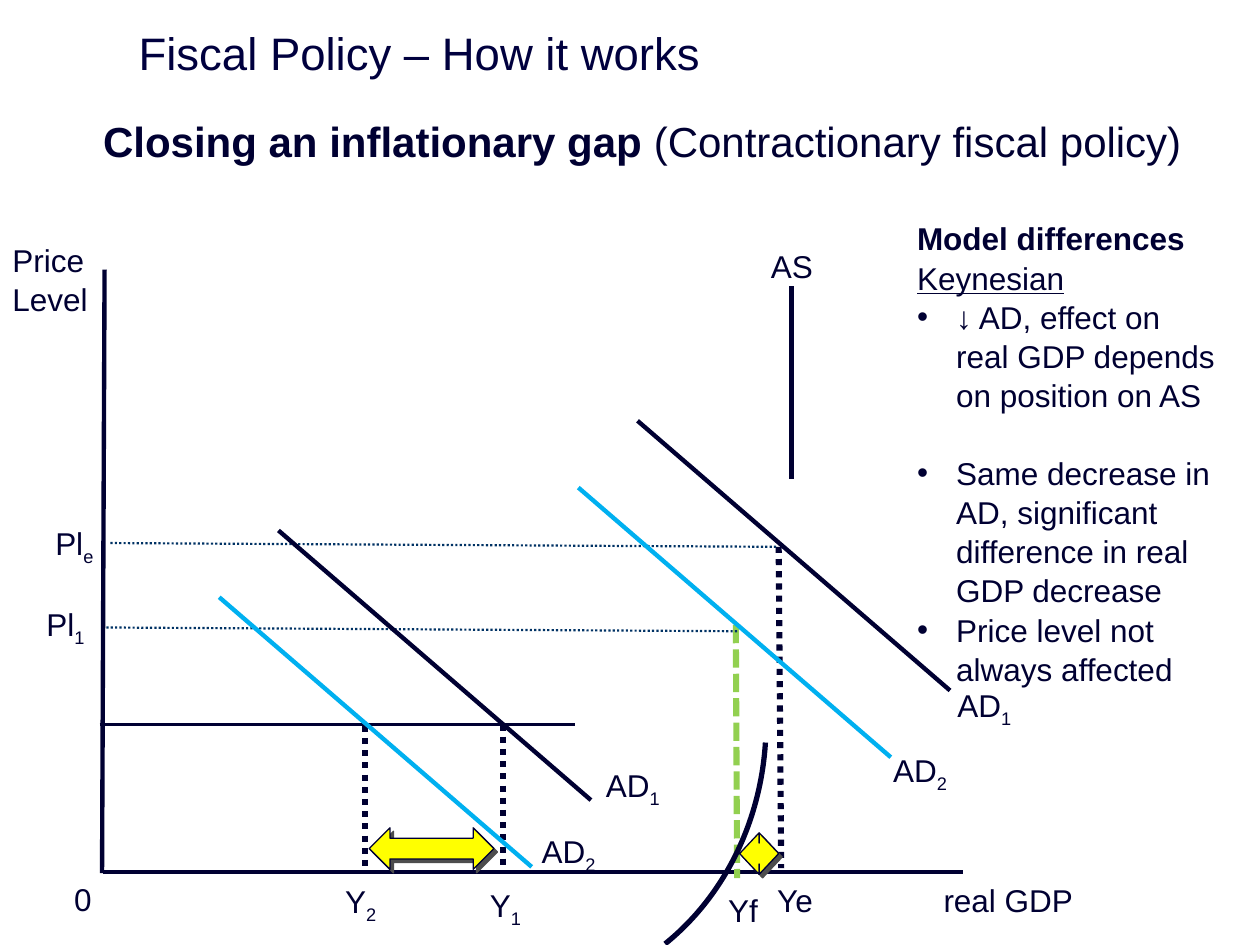
from lxml import etree
from pptx import Presentation
from pptx import oxml
from pptx import util as u
from pptx.dml.color import RGBColor
from pptx.enum import dml, shapes, text
from pptx.oxml.ns import qn

NAVY, BLUE, CYAN = "000032", "003264", "00B0F0"
GREEN, YELLOW, GREY = "92D050", "FFFF00", "4D4D4D"
DOT, DASH = dml.MSO_LINE.ROUND_DOT, dml.MSO_LINE.SQUARE_DOT

TITLE = "Fiscal Policy – How it works"
HEAD = [("Closing an inflationary gap ", True),
        ("(Contractionary fiscal policy)", False)]

# Start, end, colour, width, dash
LINES = [
    ((0.83, 2.14), (0.81, 6.93), NAVY, 2.5, None),
    ((7.64, 6.92), (0.82, 6.92), NAVY, 2.5, None),
    ((0.79, 5.75), (4.56, 5.75), NAVY, 2, None),
    ((6.28, 3.8), (6.28, 2.27), NAVY, 3, None),
    ((6.18, 4.34), (6.2, 6.89), NAVY, 3.5, DOT),
    ((5.84, 4.96), (5.85, 6.97), GREEN, 3.5, DASH),
    ((5.85, 5.01), (0.83, 4.98), BLUE, 1.25, DOT),
    ((6.16, 4.34), (0.86, 4.31), BLUE, 1.25, DOT),
    ((3.99, 5.75), (3.99, 6.93), NAVY, 3.5, DOT),
    ((2.9, 5.76), (2.9, 6.94), NAVY, 3.5, DOT),
]

# Every demand curve has the same run and fall
FALL = (2.48, 2.14)
DEMAND = [((4.59, 3.87), CYAN), ((5.06, 3.34), NAVY),
          ((1.74, 4.74), CYAN), ((2.21, 4.21), NAVY)]

GAPS = [(2.93, 6.57, 0.99, 0.33), (5.87, 6.61, 0.31, 0.33)]

# Text, subscript, left, top, width
LABELS = [
    ("real GDP", "", 7.39, 6.93, 1.24), ("0", "", 0.49, 6.92, 0.64),
    ("Yf", "", 5.68, 7.01, 1.24), ("Ye", "", 6.07, 6.93, 0.54),
    ("AS", "", 6.02, 1.9, 0.97),
    ("AD", "2", 6.99, 5.9, 0.65), ("AD", "1", 7.5, 5.38, 0.65),
    ("AD", "2", 4.2, 6.54, 0.65), ("AD", "1", 4.71, 6.02, 0.65),
    ("Pl", "e", 0.34, 4.1, 0.75), ("Pl", "1", 0.27, 4.74, 0.75),
    ("Y", "1", 3.79, 6.97, 0.54), ("Y", "2", 2.64, 6.94, 0.54),
]

# Text, style, points before
NOTES = [
    ("Model differences", "bold", 0),
    ("Keynesian", "under", 0),
    ("↓ AD, effect on real GDP depends on position on AS", "bullet", 0),
    ("Same decrease in AD, significant difference in real GDP decrease",
     "bullet", 21.6),
    ("Price level not always affected", "bullet", 0),
]


def rgb(code):
    return RGBColor.from_string(code)


def style(para, size=18, color=NAVY):
    font = para.font
    font.name, font.size = "Arial", u.Pt(size)
    font.color.rgb = rgb(color)


def box(left, top, width, height):
    frame = slide.shapes.add_textbox(
        *map(u.Inches, (left, top, width, height))).text_frame
    frame.word_wrap = True
    return frame


def write(frame, rows):
    """Fill a frame with one paragraph per row and yield each paragraph."""
    for i, row in enumerate(rows):
        para = frame.add_paragraph() if i else frame.paragraphs[0]
        para.line_spacing = 1.04
        yield para, row


def line(start, end, color, width, dash=None):
    link = slide.shapes.add_connector(
        shapes.MSO_CONNECTOR.STRAIGHT, *map(u.Inches, start + end))
    link.line.color.rgb = rgb(color)
    link.line.width = u.Pt(width)
    if dash:
        link.line.dash_style = dash
    etree.SubElement(link._element.spPr, qn("a:effectLst"))


def shape(kind, at, width):
    item = slide.shapes.add_shape(kind, *map(u.Inches, at))
    item.shadow.inherit = False
    item.line.color.rgb = rgb(NAVY)
    item.line.width = u.Pt(width)
    return item


def bullet(para):
    props = para._p.get_or_add_pPr()
    props.set("marL", str(u.Inches(0.31)))
    props.set("indent", str(-u.Inches(0.31)))
    etree.SubElement(props, qn("a:buFont")).set("typeface", "Arial")
    etree.SubElement(props, qn("a:buChar")).set("char", "•")


def shade(item):
    """Give a shape a hard grey shadow to the lower right."""
    effects = item._element.spPr.find(qn("a:effectLst"))
    effects.append(oxml.parse_xml(
        '<a:outerShdw xmlns:a="http://schemas.openxmlformats.org/'
        'drawingml/2006/main" dist="35900" dir="2700000" algn="ctr" '
        f'rotWithShape="0"><a:srgbClr val="{GREY}"/></a:outerShdw>'))


prs = Presentation()
prs.slide_width, prs.slide_height = u.Inches(10), u.Inches(7.5)
slide = prs.slides.add_slide(prs.slide_layouts[5])

title = slide.shapes.title
title.left, title.top = u.Inches(1), u.Inches(0.16)
title.width, title.height = u.Inches(9), u.Inches(0.51)
title.text_frame.text = TITLE
title.text_frame.vertical_anchor = text.MSO_ANCHOR.MIDDLE
para = title.text_frame.paragraphs[0]
para.alignment = text.PP_ALIGN.LEFT
style(para, 26, "00003E")

para = box(0.72, 0.87, 8.83, 4.95).paragraphs[0]
style(para, 24)
for words, bold in HEAD:
    run = para.add_run()
    run.text, run.font.bold = words, bold

for row in LINES:
    line(*row)
for start, color in DEMAND:
    end = tuple(a + b for a, b in zip(start, FALL))
    line(start, end, color, 2.5)

curve = shape(shapes.MSO_SHAPE.ARC, (2.21, 3.59, 3.87, 4.31), 3)
curve.fill.background()
for i, angle in enumerate((4.4, 57)):
    curve.adjustments[i] = angle * 0.6  # 60000ths of a degree over 100000

for at in GAPS:
    arrow = shape(shapes.MSO_SHAPE.LEFT_RIGHT_ARROW, at, 0.75)
    arrow.fill.solid()
    arrow.fill.fore_color.rgb = rgb(YELLOW)
    shade(arrow)

for para, words in write(box(0, 1.85, 0.97, 0.71), ("Price", "Level")):
    para.text = words
    style(para)

for words, sub, left, top, width in LABELS:
    for para, word in write(box(left, top, width, 0.4), [words]):
        style(para)
        para.add_run().text = word
        if sub:
            low = para.add_run()
            low.text = sub
            low.font._element.set("baseline", "-25000")

for para, (words, look, before) in write(box(7.18, 1.68, 2.58, 4.34), NOTES):
    para.text = words
    if before:
        para.space_before = u.Pt(before)
    if look == "bullet":
        bullet(para)
    style(para)
    para.font.bold = look == "bold"
    para.font.underline = look == "under"

prs.save("out.pptx")
